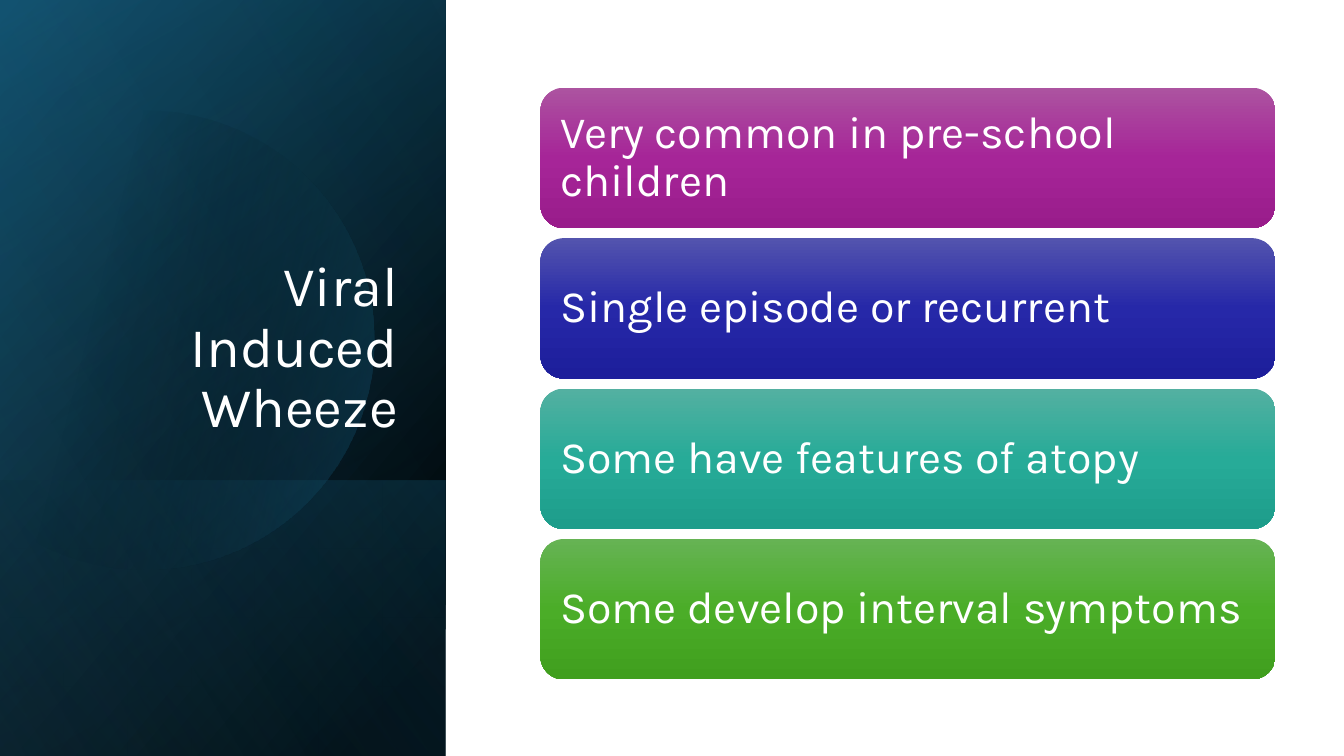
"""Build the slide on viral induced wheeze."""
import math
from collections import namedtuple

from pptx import Presentation, oxml, util as u
from pptx.dml.color import RGBColor
from pptx.enum import shapes, text
from pptx.oxml import ns

Box = namedtuple("Box", "left top width height")

WIDTH, HEIGHT = 13.33, 7.5
FONT = "Karla"
WHITE = RGBColor(0xFF, 0xFF, 0xFF)
BLACK = RGBColor(0x00, 0x00, 0x00)
DEEP_TEAL = RGBColor(0x10, 0x48, 0x62)
TEAL = RGBColor(0x15, 0x60, 0x82)
SKY = RGBColor(0x46, 0xB1, 0xE1)
PURPLES = RGBColor(0xAC, 0x53, 0xA0), RGBColor(0xA6, 0x25, 0x98), RGBColor(0x99, 0x1C, 0x8B)
BLUES = RGBColor(0x53, 0x54, 0xAE), RGBColor(0x26, 0x28, 0xA8), RGBColor(0x1D, 0x1E, 0x9B)
GREENBLUES = RGBColor(0x53, 0xB0, 0xA1), RGBColor(0x27, 0xAB, 0x98), RGBColor(0x1D, 0x9D, 0x8B)
GREENS = RGBColor(0x66, 0xB3, 0x54), RGBColor(0x4B, 0xAD, 0x28), RGBColor(0x40, 0x9F, 0x1E)

TITLE = "Viral Induced Wheeze"
CARDS = [
    ("Very common in pre-school children", PURPLES),
    ("Single episode or recurrent", BLUES),
    ("Some have features of atopy", GREENBLUES),
    ("Some develop interval symptoms", GREENS),
]


def inches(box):
    """Return the sides of a box as lengths."""
    return [u.Inches(side) for side in box]


def paint(shape, stops, angle):
    """Fill a shape with a gradient of (position, colour, opacity) stops, all in percent."""
    shape.shadow.inherit = False
    shape.fill.background()
    marks = "".join(
        f'<a:gs pos="{place * 1000}"><a:srgbClr val="{colour}">'
        f'<a:alpha val="{opacity * 1000}"/></a:srgbClr></a:gs>'
        for place, colour, opacity in stops
    )
    gradient = oxml.parse_xml(
        f'<a:gradFill {ns.nsdecls("a")} rotWithShape="1"><a:gsLst>{marks}</a:gsLst>'
        f'<a:lin ang="{angle * 60000}" scaled="0"/></a:gradFill>'
    )
    properties = shape._element.spPr
    properties.replace(properties.find(ns.qn("a:noFill")), gradient)
    shape.line.fill.background()


def write(shape, words, size, align, anchor, inset):
    """Write one wrapped paragraph into a shape."""
    frame = shape.text_frame
    frame.word_wrap = True
    frame.vertical_anchor = anchor
    frame.margin_left = frame.margin_right = u.Inches(inset)
    frame.margin_top = frame.margin_bottom = u.Inches(inset)
    para = frame.paragraphs[0]
    para.alignment = align
    para.line_spacing = 0.9
    span = para.add_run()
    span.text = words
    span.font.name = FONT
    span.font.size = u.Pt(size)
    span.font.color.rgb = WHITE


def add_layer(page, box, stops, angle):
    """Cover a box with a mirrored rectangle turned by a quarter."""
    left = box.left + (box.width - box.height) / 2
    top = box.top + (box.height - box.width) / 2
    turned = Box(left, top, box.height, box.width)
    layer = page.shapes.add_shape(shapes.MSO_SHAPE.RECTANGLE, *inches(turned))
    layer.rotation = 90
    layer._element.spPr.xfrm.set("flipH", "1")
    paint(layer, stops, angle)


def add_disc(page, box):
    """Draw the pale disc that the left side of the box cuts off."""
    across, down, radius = 0.325 * box.width, 0.45 * box.height, 0.515 * box.width
    limit = math.acos(-across / radius)
    steps = 90
    turns = [limit * (2 * step / steps - 1) for step in range(steps + 1)]
    points = [
        (u.Inches(box.left + across + radius * math.cos(turn)),
         u.Inches(box.top + down + radius * math.sin(turn)))
        for turn in turns
    ]
    outline = page.shapes.build_freeform(*points[0])
    outline.add_line_segments(points[1:], close=True)
    paint(outline.convert_to_shape(), [(29, BLACK, 0), (100, TEAL, 43)], 14)


def add_title_panel(page, box):
    """Layer the dark panel and set the title on it."""
    foot = 0.365 * box.height
    lower = Box(box.left, box.top + box.height - foot, box.width, foot)
    add_layer(page, box, [(8, BLACK, 100), (100, DEEP_TEAL, 100)], 50)
    add_layer(page, box, [(0, BLACK, 0), (99, TEAL, 46)], 30)
    add_layer(page, lower, [(2, TEAL, 29), (100, BLACK, 30)], 130)
    add_disc(page, box)
    add_layer(page, box, [(0, BLACK, 0), (99, SKY, 11)], 120)
    area = Box(box.left + 0.145 * box.width, box.top + 0.245 * box.height,
               0.77 * box.width, 0.35 * box.height)
    title = page.shapes.add_textbox(*inches(area))
    write(title, TITLE, 40, text.PP_ALIGN.RIGHT, text.MSO_ANCHOR.BOTTOM, 0.1)


def add_cards(page, box):
    """Stack the rounded cards with equal gaps."""
    gap = 0.1
    height = (box.height - gap * (len(CARDS) - 1)) / len(CARDS)
    for row, (words, colours) in enumerate(CARDS):
        place = Box(box.left, box.top + row * (height + gap), box.width, height)
        card = page.shapes.add_shape(shapes.MSO_SHAPE.ROUNDED_RECTANGLE, *inches(place))
        paint(card, [(50 * step, colour, 100) for step, colour in enumerate(colours)], 90)
        write(card, words, 32, text.PP_ALIGN.LEFT, text.MSO_ANCHOR.MIDDLE, 0.13)


def main():
    """Build and save the deck."""
    deck = Presentation()
    deck.slide_width, deck.slide_height = u.Inches(WIDTH), u.Inches(HEIGHT)
    page = deck.slides.add_slide(deck.slide_layouts[6])
    add_title_panel(page, Box(0, 0, 4.42, HEIGHT))
    add_cards(page, Box(5.36, 0.87, 7.29, 5.87))
    deck.save("out.pptx")


if __name__ == "__main__":
    main()
